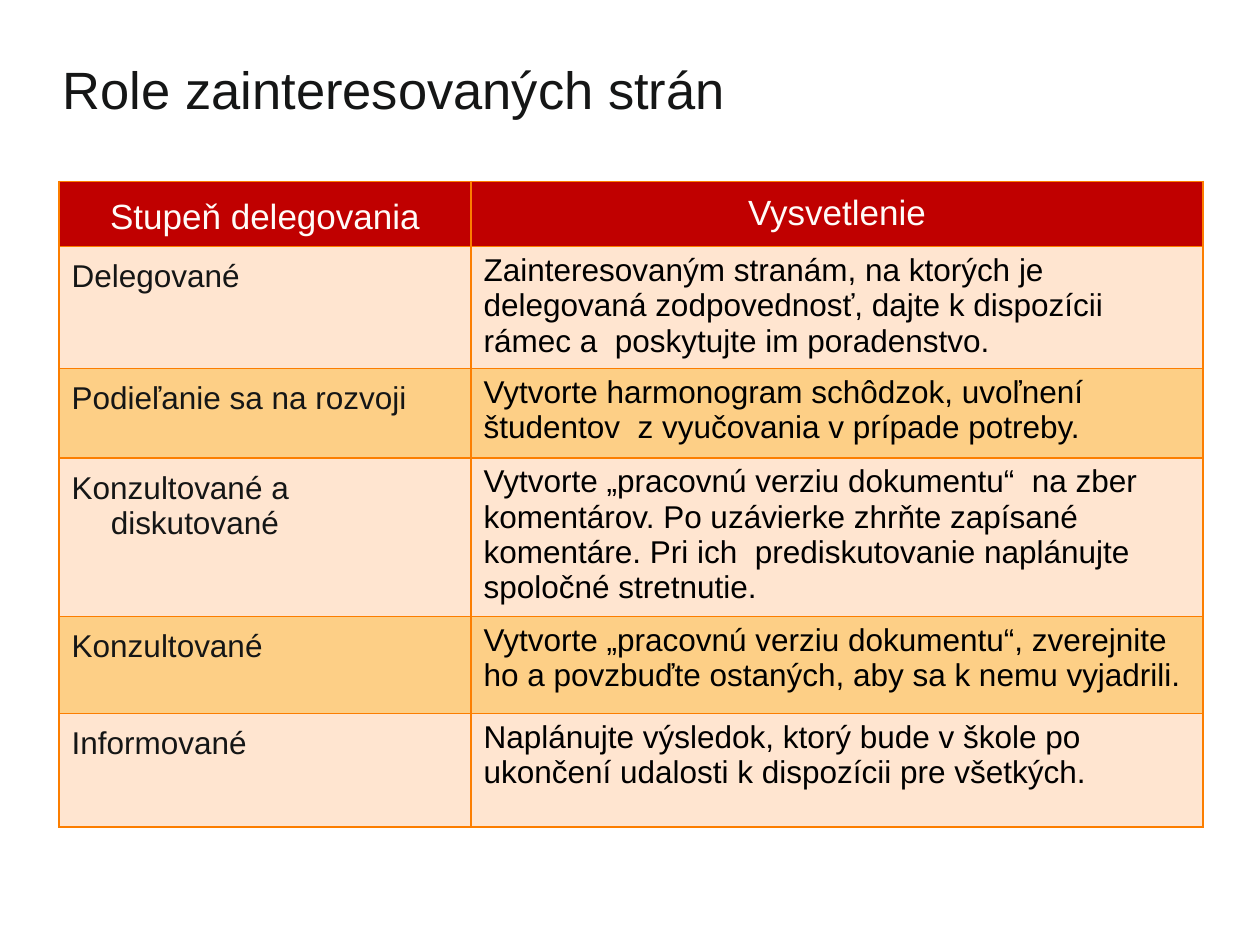
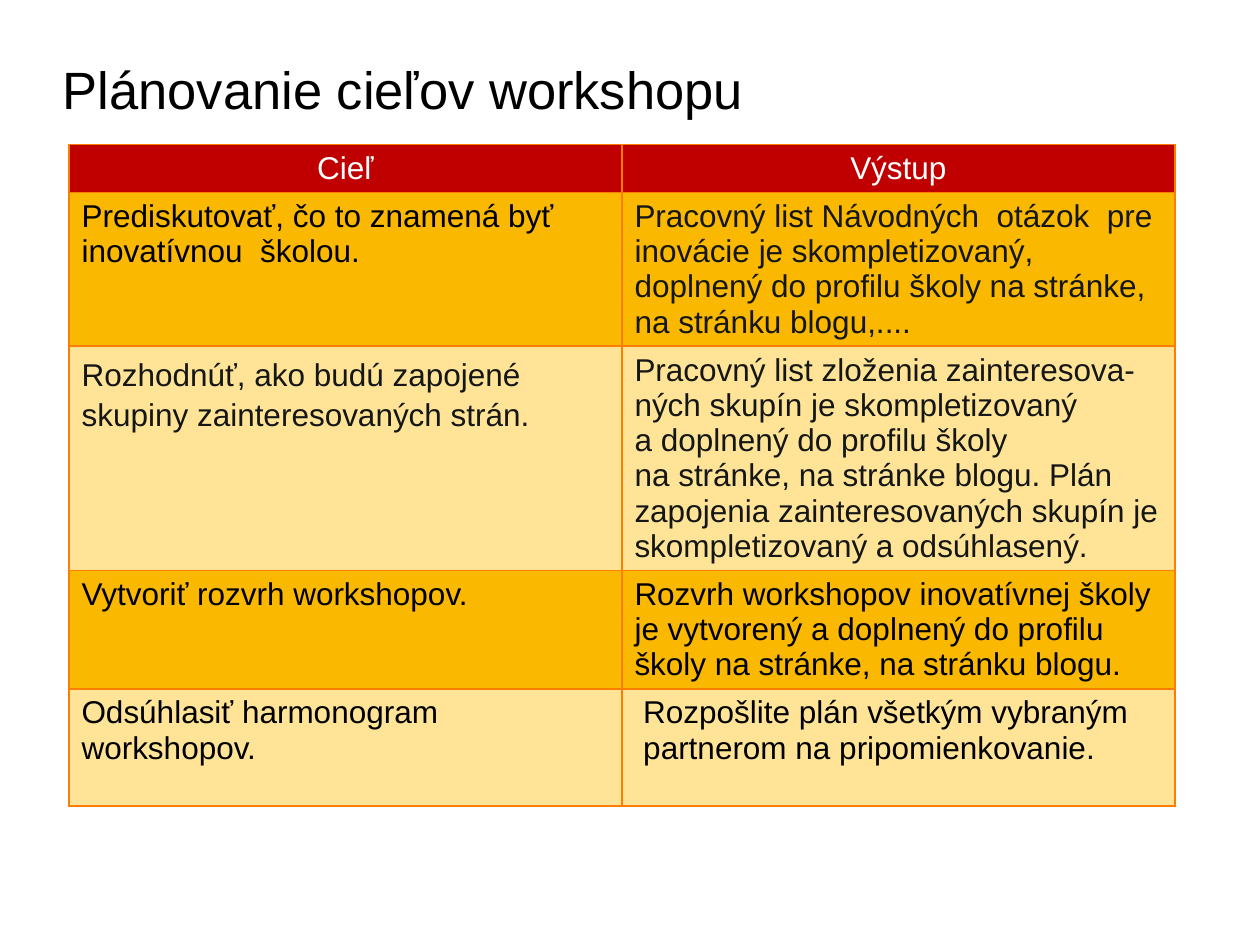
from dataclasses import dataclass

from lxml import etree
from pptx import Presentation
from pptx.dml.color import RGBColor
from pptx.enum import text as t
from pptx.oxml import ns
from pptx.util import Pt

FONT = "Arial"
WHITE = RGBColor(0xFF, 0xFF, 0xFF)
CREAM = RGBColor(0xFF, 0xFB, 0xF8)
BLACK = RGBColor(0x00, 0x00, 0x00)
INK = RGBColor(0x15, 0x16, 0x16)
RED = RGBColor(0xC0, 0x00, 0x00)
ORANGE = RGBColor(0xFC, 0x7E, 0x00)
PEACH = RGBColor(0xFF, 0xE5, 0xD0)
APRICOT = RGBColor(0xFD, 0xCF, 0x86)
AMBER = RGBColor(0xFA, 0xB9, 0x00)
PALE_AMBER = RGBColor(0xFF, 0xE4, 0x97)

NBSP = chr(160)
SIDE_INSET = 7.2
TOP_INSET = 3.6
LINE_HEIGHT = 1.12  # of the font size


@dataclass(frozen=True)
class Entry:
    """One table cell; lengths are in points."""
    text: str
    color: RGBColor = BLACK
    size: float = 18
    centred: bool = False
    middle: bool = False
    inset: float = TOP_INSET
    margin: float = 0
    hanging: float = 0
    spacing: float | None = None


@dataclass(frozen=True)
class Grid:
    left: float
    top: float
    columns: tuple[float, ...]
    heights: tuple[float, ...]
    bands: tuple[RGBColor, RGBColor]
    rows: list[tuple[Entry, Entry]]


def level(name: str) -> Entry:
    """Name of a delegation level, with a hanging indent."""
    return Entry(name, INK, inset=7.2, margin=22.3, hanging=22.3)


def style_font(paragraph, size: float, color: RGBColor) -> None:
    for run in paragraph.runs:
        run.font.name = FONT
        run.font.size = Pt(size)
        run.font.bold = False
        run.font.color.rgb = color


def add_title(slide, title: str, width: float, color: RGBColor) -> None:
    box = slide.shapes.add_textbox(Pt(28.8), Pt(28.8), Pt(width), Pt(62.6))
    frame = box.text_frame
    frame.word_wrap = True
    frame.text = title
    style_font(frame.paragraphs[0], 30, color)


def add_borders(cell) -> None:
    properties = cell._tc.get_or_add_tcPr()
    for index, side in enumerate(("lnL", "lnR", "lnT", "lnB")):
        line = etree.Element(ns.qn(f"a:{side}"), w=str(Pt(1)))
        fill = etree.SubElement(line, ns.qn("a:solidFill"))
        etree.SubElement(fill, ns.qn("a:srgbClr"), val=str(ORANGE))
        properties.insert(index, line)


def fill_cell(cell, entry: Entry, background: RGBColor) -> None:
    cell.fill.solid()
    cell.fill.fore_color.rgb = background
    add_borders(cell)
    cell.margin_left = cell.margin_right = Pt(SIDE_INSET)
    cell.margin_top = cell.margin_bottom = Pt(entry.inset)
    cell.vertical_anchor = (t.MSO_ANCHOR.MIDDLE if entry.middle
                            else t.MSO_ANCHOR.TOP)
    cell.text_frame.text = entry.text
    for paragraph in cell.text_frame.paragraphs:
        paragraph.alignment = (t.PP_ALIGN.CENTER if entry.centred
                               else t.PP_ALIGN.LEFT)
        paragraph.line_spacing = entry.spacing or Pt(entry.size * LINE_HEIGHT)
        indents = paragraph._p.get_or_add_pPr()
        indents.set("marL", str(Pt(entry.margin)))
        indents.set("indent", str(-Pt(entry.hanging)))
        style_font(paragraph, entry.size, entry.color)


def add_grid(slide, grid: Grid) -> None:
    table = slide.shapes.add_table(
        len(grid.rows), len(grid.columns), Pt(grid.left), Pt(grid.top),
        Pt(sum(grid.columns)), Pt(sum(grid.heights))).table
    table.first_row = table.horz_banding = False
    for column, width in zip(table.columns, grid.columns):
        column.width = Pt(width)
    for row, height in zip(table.rows, grid.heights):
        row.height = Pt(height)
    for r, entries in enumerate(grid.rows):
        background = grid.bands[(r - 1) % 2] if r else RED
        for c, entry in enumerate(entries):
            fill_cell(table.cell(r, c), entry, background)


# Stakeholder roles by level of delegation
ROLES = Grid(
    33.8, 103.6, (235.4, 418.3), (37.4, 69.6, 51.1, 90.7, 55.4, 64.8),
    (PEACH, APRICOT),
    [
        (Entry("Stupeň delegovania", CREAM, 20, centred=True, middle=True,
               inset=0, spacing=1.15),
         Entry("Vysvetlenie", CREAM, 20, centred=True, inset=7.2)),
        (level("Delegované"),
         Entry("Zainteresovaným stranám, na ktorých je delegovaná "
               "zodpovednosť, dajte k dispozícii rámec "
               f"a{NBSP} poskytujte im poradenstvo.")),
        (level("Podieľanie sa na rozvoji"),
         Entry("Vytvorte harmonogram schôdzok, uvoľnení študentov  "
               f"z{NBSP}vyučovania v{NBSP}prípade potreby.")),
        (level("Konzultované a diskutované"),
         Entry("Vytvorte „pracovnú verziu dokumentu“  na zber komentárov. "
               "Po uzávierke zhrňte zapísané  komentáre. Pri ich  "
               "prediskutovanie naplánujte spoločné stretnutie.")),
        (level("Konzultované"),
         Entry("Vytvorte „pracovnú verziu dokumentu“, zverejnite ho "
               f"a povzbuďte ostaných, aby sa k{NBSP}nemu vyjadrili.")),
        (level("Informované"),
         Entry(f"Naplánujte výsledok, ktorý bude v{NBSP}škole po ukončení "
               f"udalosti k{NBSP}dispozícii pre všetkých.")),
    ])

# Workshop goals and their outputs
GOALS = Grid(
    39.4, 82.6, (316, 316), (27.4, 87.7, 128.2, 67.7, 67),
    (AMBER, PALE_AMBER),
    [
        (Entry("Cieľ", WHITE, centred=True),
         Entry("Výstup", WHITE, centred=True)),
        (Entry("Prediskutovať, čo to znamená byť inovatívnou  školou."),
         Entry("Pracovný list Návodných  otázok  pre inovácie je "
               "skompletizovaný, doplnený do profilu školy na stránke, "
               "na stránku blogu,....", INK)),
        (Entry("Rozhodnúť, ako budú zapojené skupiny zainteresovaných "
               "strán.", INK, spacing=1.15),
         Entry("Pracovný list zloženia zainteresova-ných skupín je "
               f"skompletizovaný a{NBSP}doplnený do profilu školy "
               f"na{NBSP}stránke, na stránke blogu. Plán zapojenia "
               "zainteresovaných skupín je skompletizovaný a odsúhlasený.",
               INK)),
        (Entry("Vytvoriť rozvrh workshopov."),
         Entry("Rozvrh workshopov inovatívnej školy je vytvorený a doplnený "
               "do profilu\nškoly na stránke, na stránku blogu.")),
        (Entry("Odsúhlasiť harmonogram workshopov."),
         Entry("Rozpošlite plán všetkým vybraným\n"
               "partnerom na pripomienkovanie.", margin=5)),
    ])


def main() -> None:
    deck = Presentation()
    deck.slide_width, deck.slide_height = Pt(720), Pt(540)
    blank = deck.slide_layouts[6]

    roles = deck.slides.add_slide(blank)
    add_title(roles, "Role zainteresovaných strán", 660, INK)
    add_grid(roles, ROLES)

    goals = deck.slides.add_slide(blank)
    add_grid(goals, GOALS)
    add_title(goals, "Plánovanie cieľov workshopu", 528.5, BLACK)

    deck.save("out.pptx")


if __name__ == "__main__":
    main()
